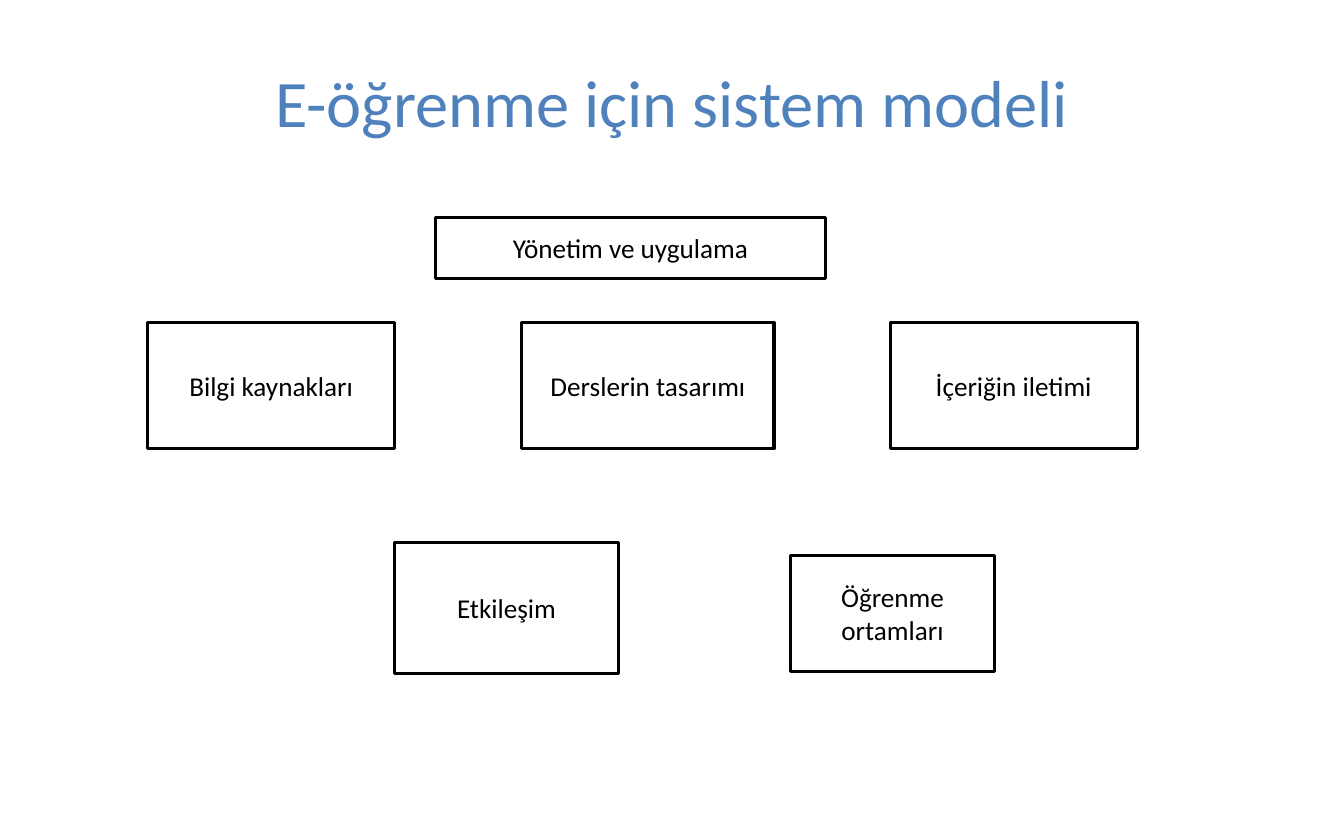
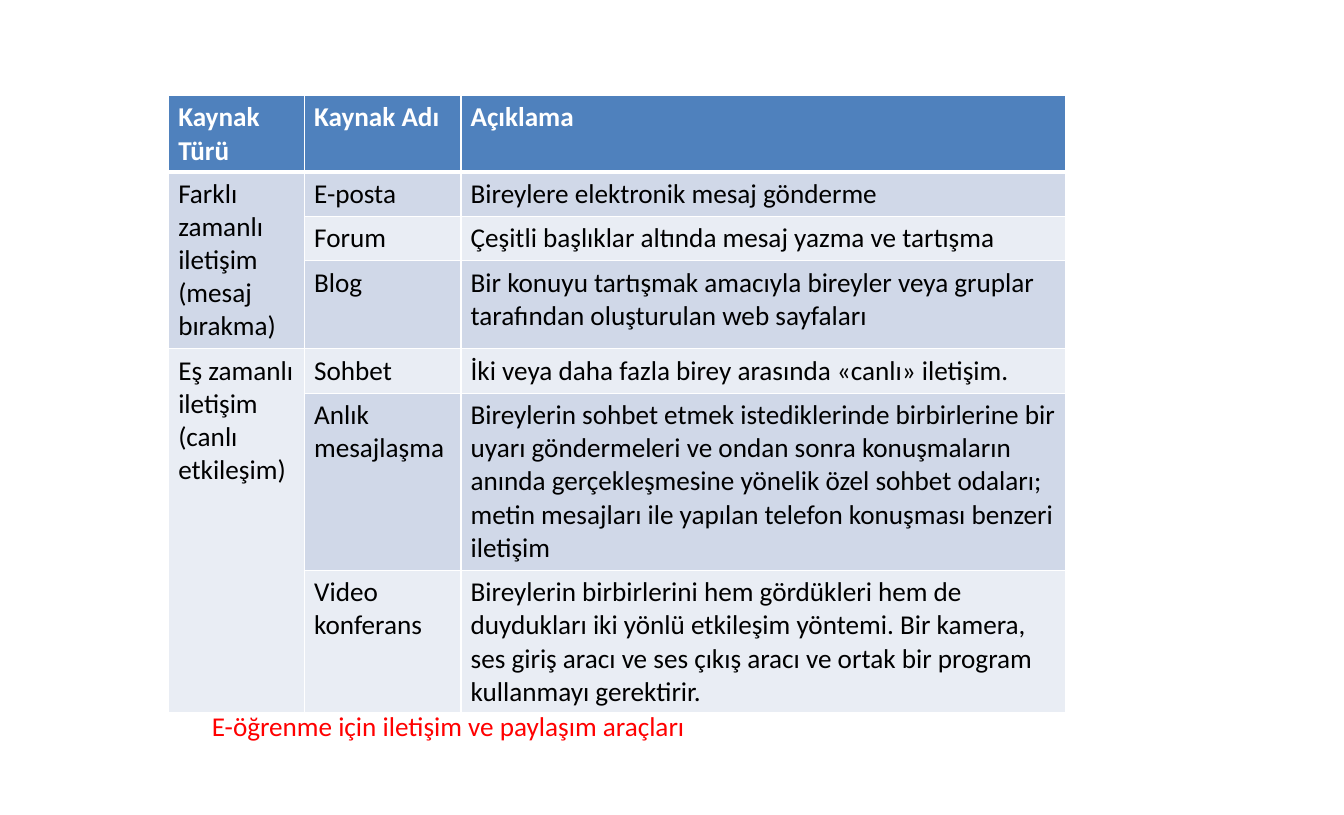
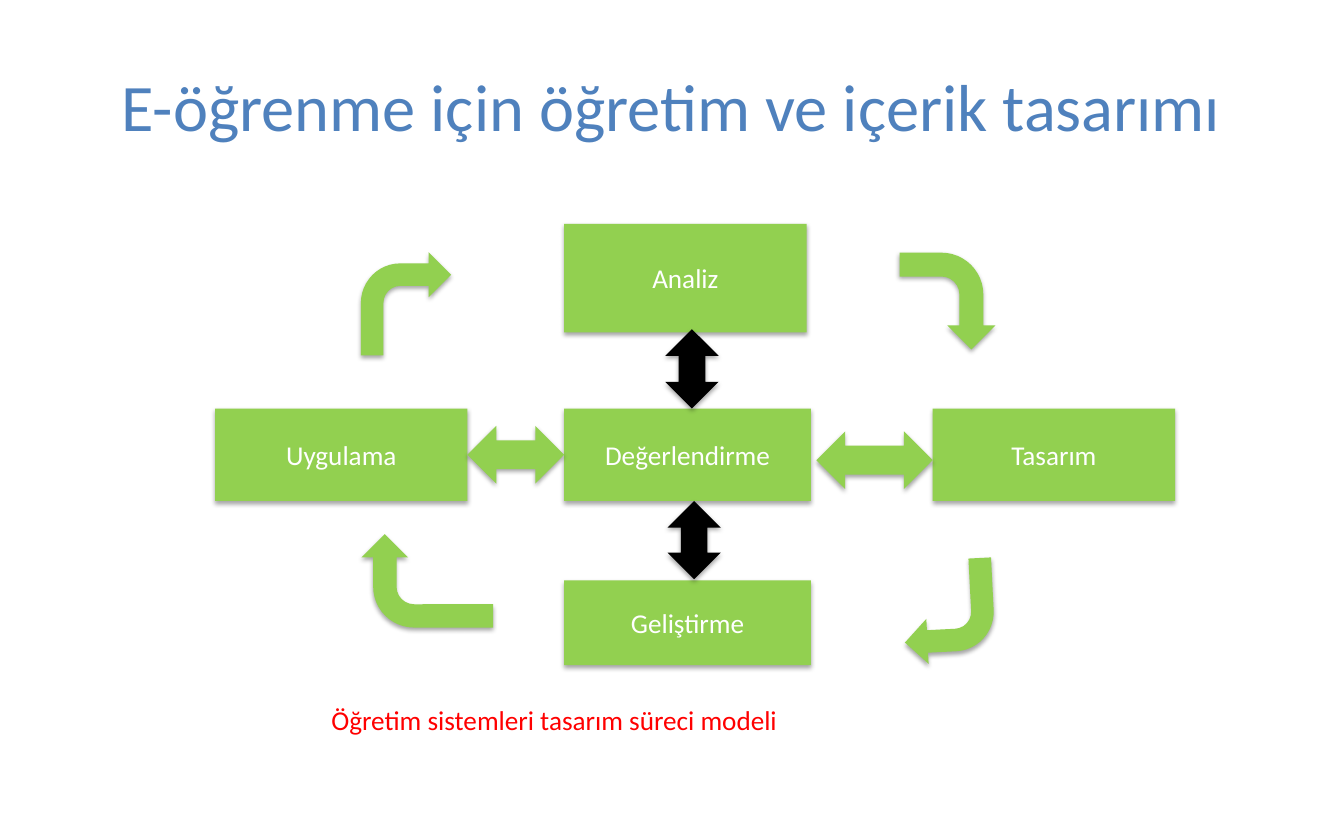
from lxml.etree import SubElement
from pptx import Presentation
from pptx.dml.color import RGBColor
from pptx.enum.shapes import MSO_SHAPE as Preset
from pptx.enum.text import MSO_ANCHOR as Anchor, PP_ALIGN as Align
from pptx.oxml.ns import qn
from pptx.util import Emu, Pt

PX = 9144  # 100 px to the inch
SLIDE_SIZE = (Emu(11304588), Emu(6858000))
FONT = "Calibri"
BODY_SIZE, TITLE_SIZE = 18, 44
COLORS = {
    "title": "4F81BD", "caption": "FF0000", "black": "000000",
    "white": "FFFFFF", "green": "92D050",
    "header": "4F81BD", "band_dark": "D0D8E8", "band_light": "E9EDF4",
}

# Slide 1: system model; boxes are (text, left, top, width, height)
MODEL_TITLE = ("E-öğrenme için sistem modeli", (62, 30, 1113, 125))
MODEL_BOXES = [
    ("Yönetim ve uygulama", 401, 200, 358, 56),
    ("Bilgi kaynakları", 136, 297, 227, 116),
    ("Derslerin tasarımı", 480, 297, 232, 116),
    ("İçeriğin iletimi", 819, 297, 227, 116),
    ("Etkileşim", 363, 499, 206, 121),
    ("Öğrenme ortamları", 727, 511, 188, 107),
]

# Slide 2: communication tools
TOOLS_AT = (155, 88)
COLUMN_WIDTHS = [125, 144, 556]
ROW_HEIGHTS = [70, 41, 41, 81, 41, 163, 131]
CELL_MARGIN = 9
TOOLS_HEADER = ["Kaynak Türü", "Kaynak Adı", "Açıklama"]
TOOL_GROUPS = [
    ("Farklı zamanlı iletişim (mesaj bırakma)", [
        ("E-posta", "Bireylere elektronik mesaj gönderme"),
        ("Forum", "Çeşitli başlıklar altında mesaj yazma ve tartışma"),
        ("Blog", "Bir konuyu tartışmak amacıyla bireyler veya gruplar "
                 "tarafından oluşturulan web sayfaları"),
    ]),
    ("Eş zamanlı iletişim\n(canlı etkileşim)", [
        ("Sohbet", "İki veya daha fazla birey arasında «canlı» iletişim."),
        ("Anlık mesajlaşma",
         "Bireylerin sohbet etmek istediklerinde birbirlerine bir uyarı "
         "göndermeleri ve ondan sonra konuşmaların anında gerçekleşmesine "
         "yönelik özel sohbet odaları; metin mesajları ile yapılan telefon "
         "konuşması benzeri iletişim"),
        ("Video konferans",
         "Bireylerin birbirlerini hem gördükleri hem de duydukları iki yönlü "
         "etkileşim yöntemi. Bir kamera, ses giriş aracı ve ses çıkış aracı "
         "ve ortak bir program kullanmayı gerektirir."),
    ]),
]
TOOLS_CAPTION = ("E-öğrenme için iletişim ve paylaşım araçları", (185, 648, 778, 40))

# Slide 3: design process
PROCESS_TITLE = ("E-öğrenme için öğretim ve içerik tasarımı", (85, 24, 1066, 145))
PROCESS_BOXES = [
    ("Analiz", 519, 206, 223, 100),
    ("Değerlendirme", 519, 376, 227, 85),
    ("Geliştirme", 519, 534, 227, 78),
    ("Tasarım", 858, 376, 223, 85),
    ("Uygulama", 198, 376, 232, 85),
]
PROCESS_ARROWS = [  # preset, color, rotation, frame before rotation
    (Preset.BENT_ARROW, "green", 90, (827, 233, 89, 88)),
    (Preset.BENT_ARROW, "green", 177.1, (831, 515, 83, 95)),
    (Preset.BENT_ARROW, "green", 270, (350, 474, 86, 121)),
    (Preset.BENT_ARROW, "green", 0, (332, 232, 83, 95)),
    (Preset.LEFT_RIGHT_ARROW, "green", 0, (430, 392, 89, 53)),
    (Preset.LEFT_RIGHT_ARROW, "green", 0, (751, 397, 107, 53)),
    (Preset.UP_DOWN_ARROW, "black", 0, (612, 303, 49, 73)),
    (Preset.UP_DOWN_ARROW, "black", 0, (614, 461, 49, 72)),
]
PROCESS_CAPTION = ("Öğretim sistemleri tasarım süreci modeli", (295, 642, 720, 40))


def emu(*lengths):
    return [Emu(length * PX) for length in lengths]


def rgb(color):
    return RGBColor.from_string(COLORS[color])


def write(frame, text, color, size=BODY_SIZE, align=Align.LEFT, bold=False):
    frame.word_wrap = True
    for index, line in enumerate(text.split("\n")):
        paragraph = frame.add_paragraph() if index else frame.paragraphs[0]
        paragraph.alignment = align
        run = paragraph.add_run()
        run.text = line
        run.font.name, run.font.size, run.font.bold = FONT, Pt(size), bold
        run.font.color.rgb = rgb(color)


def add_title(slide, text, box):
    frame = slide.shapes.add_textbox(*emu(*box)).text_frame
    frame.vertical_anchor = Anchor.MIDDLE
    write(frame, text, "title", TITLE_SIZE, Align.CENTER)


def add_caption(slide, text, box):
    write(slide.shapes.add_textbox(*emu(*box)).text_frame, text, "caption")


def add_filled(slide, preset, box, fill, line=None, shadow=False):
    shape = slide.shapes.add_shape(preset, *emu(*box))
    shape.shadow.inherit = False
    shape.fill.solid()
    shape.fill.fore_color.rgb = rgb(fill)
    if line:
        shape.line.color.rgb = rgb(line)
        shape.line.width = Pt(2)
    else:
        shape.line.fill.background()
    if shadow:
        effects = shape._element.spPr.find(qn("a:effectLst"))
        outer = SubElement(effects, qn("a:outerShdw"), blurRad=str(Pt(3.1)),
                           dist=str(Pt(1.8)), dir="5400000", rotWithShape="0")
        tint = SubElement(outer, qn("a:srgbClr"), val=COLORS["black"])
        SubElement(tint, qn("a:alpha"), val="35000")
    return shape


def add_box(slide, text, box, fill, color, **style):
    frame = add_filled(slide, Preset.RECTANGLE, box, fill, **style).text_frame
    frame.vertical_anchor = Anchor.MIDDLE
    write(frame, text, color, align=Align.CENTER)


def style_cell(cell, fill, bottom_width, top_width):
    cell.margin_left, cell.margin_right = emu(CELL_MARGIN, CELL_MARGIN)
    properties = cell._tc.get_or_add_tcPr()
    widths = {"L": 1, "R": 1, "T": top_width, "B": bottom_width}
    for side, width in widths.items():
        border = SubElement(properties, qn(f"a:ln{side}"), w=str(Pt(width)))
        solid = SubElement(border, qn("a:solidFill"))
        SubElement(solid, qn("a:srgbClr"), val=COLORS["white"])
    cell.fill.solid()
    cell.fill.fore_color.rgb = rgb(fill)


def add_tools_table(slide):
    size = (sum(COLUMN_WIDTHS), sum(ROW_HEIGHTS))
    table = slide.shapes.add_table(len(ROW_HEIGHTS), len(COLUMN_WIDTHS),
                                   *emu(*TOOLS_AT, *size)).table
    table.horz_banding = False
    for column, width in zip(table.columns, emu(*COLUMN_WIDTHS)):
        column.width = width
    for row, height in zip(table.rows, emu(*ROW_HEIGHTS)):
        row.height = height

    # Fills and borders, with a thick rule under the header
    for index, row in enumerate(table.rows):
        fill = "header" if index == 0 else ("band_light", "band_dark")[index % 2]
        for cell in row.cells:
            style_cell(cell, fill, 3 if index == 0 else 1, 3 if index == 1 else 1)

    # Text, with the first column merged over each group
    for column, heading in enumerate(TOOLS_HEADER):
        write(table.cell(0, column).text_frame, heading, "white", bold=True)
    first = 1
    for kind, tools in TOOL_GROUPS:
        last = first + len(tools) - 1
        table.cell(first, 0).merge(table.cell(last, 0))
        write(table.cell(first, 0).text_frame, kind, "black")
        for row, tool in enumerate(tools, first):
            for column, text in enumerate(tool, 1):
                write(table.cell(row, column).text_frame, text, "black")
        first = last + 1


def main():
    presentation = Presentation()
    presentation.slide_width, presentation.slide_height = SLIDE_SIZE
    blank = presentation.slide_layouts[6]
    model, tools, process = [presentation.slides.add_slide(blank) for _ in range(3)]

    # System model
    add_title(model, *MODEL_TITLE)
    for text, *box in MODEL_BOXES:
        add_box(model, text, box, "white", "black", line="black")

    # Communication tools
    add_tools_table(tools)
    add_caption(tools, *TOOLS_CAPTION)

    # Design process
    add_title(process, *PROCESS_TITLE)
    for text, *box in PROCESS_BOXES:
        add_box(process, text, box, "green", "white", shadow=True)
    for preset, color, rotation, box in PROCESS_ARROWS:
        add_filled(process, preset, box, color, shadow=True).rotation = rotation
    add_caption(process, *PROCESS_CAPTION)

    presentation.save("out.pptx")


if __name__ == "__main__":
    main()
